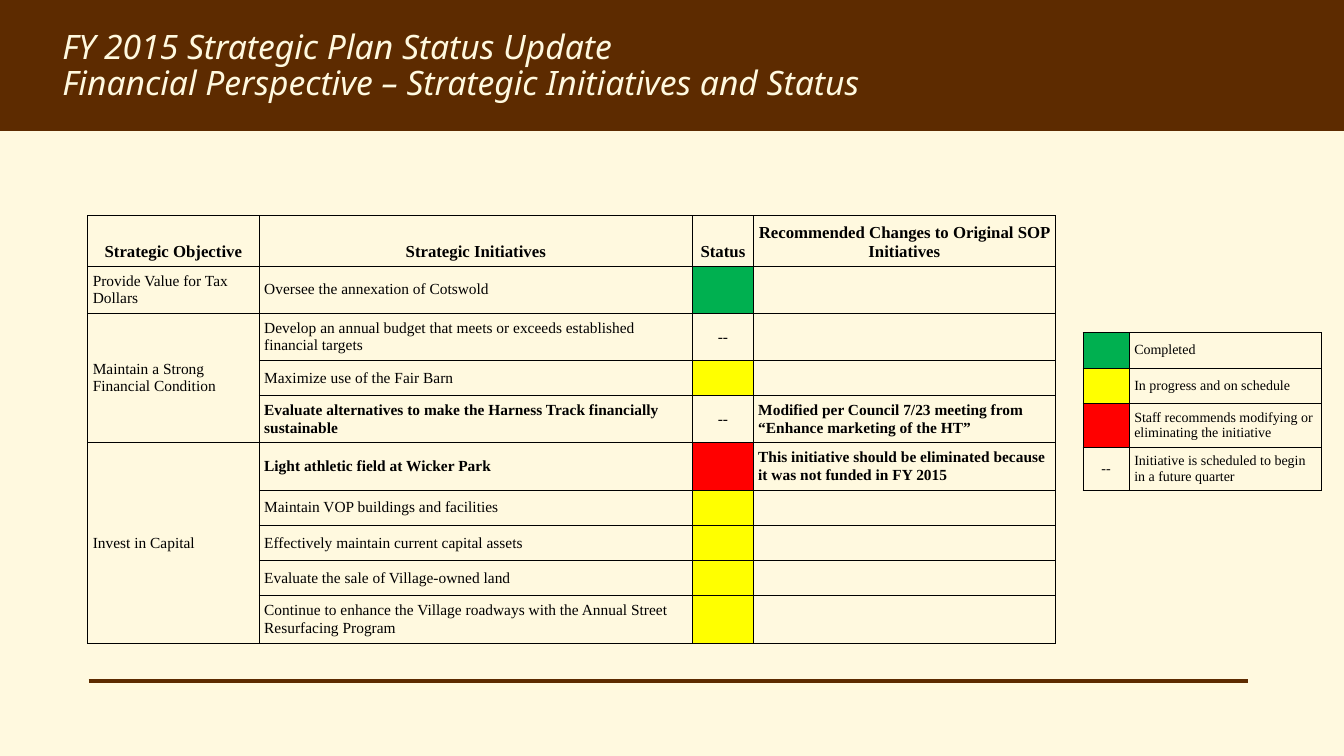
from dataclasses import dataclass

from lxml.etree import SubElement
from pptx import Presentation
from pptx.dml.color import RGBColor
from pptx.enum.shapes import MSO_CONNECTOR as CONN, MSO_SHAPE as SHAPE
from pptx.enum.text import MSO_ANCHOR as ANCHOR, PP_ALIGN as ALIGN
from pptx.oxml.ns import qn
from pptx.util import Inches, Pt

BROWN, CREAM, BLACK = "5D2B00", "FFF9DF", "000000"
GREEN, YELLOW, RED = "00B050", "FFFF00", "FF0000"
SERIF = "Times New Roman"


@dataclass
class Cell:
    text: str = ""
    size: int = 11
    bold: bool = False
    fill: str = ""
    align: ALIGN = ALIGN.LEFT
    anchor: ANCHOR = ANCHOR.MIDDLE
    rows: int = 1


def header(text: str) -> Cell:
    return Cell(text, 12, True, align=ALIGN.CENTER, anchor=ANCHOR.BOTTOM)


def status(value: str, size: int = 11) -> Cell:
    if value == "--":
        return Cell(value, size, align=ALIGN.CENTER)
    return Cell(size=size, fill=value)


def rgb(color: str) -> RGBColor:
    return RGBColor.from_string(color)


def add_borders(cell) -> None:
    tcPr = cell._tc.get_or_add_tcPr()
    for side in ("lnL", "lnR", "lnT", "lnB"):
        ln = SubElement(tcPr, qn(f"a:{side}"), w=str(Pt(0.5)))
        fill = SubElement(ln, qn("a:solidFill"))
        SubElement(fill, qn("a:srgbClr"), val=BLACK)


def fill_cell(cell, item: Cell) -> None:
    cell.margin_left = cell.margin_right = Inches(0.05)
    cell.margin_top = cell.margin_bottom = Inches(0.05)
    cell.vertical_anchor = item.anchor
    add_borders(cell)
    if item.fill:
        cell.fill.solid()
        cell.fill.fore_color.rgb = rgb(item.fill)
    else:
        cell.fill.background()
    p = cell.text_frame.paragraphs[0]
    if not item.text:
        SubElement(p._p, qn("a:endParaRPr"), sz=str(item.size * 100))
        return
    p.text = item.text
    p.alignment = item.align
    p.font.size, p.font.bold, p.font.name = Pt(item.size), item.bold, SERIF
    p.font.color.rgb = rgb(BLACK)


def add_table(s, left: float, top: float, widths: list[float], grid: list[list[Cell]]) -> None:
    height = 0.35 * len(grid)
    tbl = s.shapes.add_table(len(grid), len(widths), Inches(left), Inches(top),
                             Inches(sum(widths)), Inches(height)).table
    tbl.first_row = tbl.horz_banding = False
    for col, width in zip(tbl.columns, widths):
        col.width = Inches(width)
    for i, items in enumerate(grid):
        tbl.rows[i].height = Inches(0.35)
        for j, item in enumerate(items):
            fill_cell(tbl.cell(i, j), item)
            if item.rows > 1:
                tbl.cell(i, j).merge(tbl.cell(i + item.rows - 1, j))


def add_title(s, lines: list[str]) -> None:
    tf = s.shapes.add_textbox(Inches(0.52), Inches(0.25), Inches(12.29), Inches(0.91)).text_frame
    tf.word_wrap = True
    for i, line in enumerate(lines):
        p = tf.add_paragraph() if i else tf.paragraphs[0]
        p.text = line
        p.line_spacing = 0.9
        p.font.size, p.font.italic, p.font.name = Pt(24), True, "Noto Sans"
        p.font.color.rgb = rgb(CREAM)


OBJECTIVES = {
    "Provide Value for Tax Dollars": [
        ("Oversee the annexation of Cotswold", GREEN, ""),
    ],
    "Maintain a Strong Financial Condition": [
        ("Develop an annual budget that meets or exceeds established financial targets", "--", ""),
        ("Maximize use of the Fair Barn", YELLOW, ""),
        ("Evaluate alternatives to make the Harness Track financially sustainable", "--",
         "Modified per Council 7/23 meeting from “Enhance marketing of the HT”"),
    ],
    "Invest in Capital": [
        ("Light athletic field at Wicker Park", RED,
         "This initiative should be eliminated because it was not funded in FY 2015"),
        ("Maintain VOP buildings and facilities", YELLOW, ""),
        ("Effectively maintain current capital assets", YELLOW, ""),
        ("Evaluate the sale of Village-owned land", YELLOW, ""),
        ("Continue to enhance the Village roadways with the Annual Street Resurfacing Program",
         YELLOW, ""),
    ],
}
LEGEND = [
    (GREEN, "Completed"),
    (YELLOW, "In progress and on schedule"),
    (RED, "Staff recommends modifying or eliminating the initiative"),
    ("--", "Initiative is scheduled to begin in a future quarter"),
]


def plan_grid() -> list[list[Cell]]:
    titles = ("Strategic Objective", "Strategic Initiatives", "Status",
              "Recommended Changes to Original SOP Initiatives")
    grid = [[header(title) for title in titles]]
    for objective, initiatives in OBJECTIVES.items():
        for i, (name, state, change) in enumerate(initiatives):
            first = Cell() if i else Cell(objective, rows=len(initiatives))
            bold = bool(change)
            grid.append([first, Cell(name, bold=bold), status(state), Cell(change, bold=bold)])
    return grid


def main() -> None:
    prs = Presentation()
    prs.slide_width, prs.slide_height = Inches(13.33), Inches(7.5)
    s = prs.slides.add_slide(prs.slide_layouts[6])
    s.background.fill.solid()
    s.background.fill.fore_color.rgb = rgb(CREAM)

    rule = s.shapes.add_connector(CONN.STRAIGHT, Inches(0.88), Inches(6.76),
                                  Inches(12.38), Inches(6.76))
    rule.line.color.rgb, rule.line.width = rgb(BROWN), Pt(3)
    SubElement(rule._element.spPr, qn("a:effectLst"))

    band = s.shapes.add_shape(SHAPE.RECTANGLE, 0, 0, prs.slide_width, Inches(1.3))
    band.shadow.inherit = False
    band.fill.solid()
    band.fill.fore_color.rgb = rgb(BROWN)
    band.line.fill.background()

    add_title(s, ["FY 2015 Strategic Plan Status Update",
                  "Financial Perspective – Strategic Initiatives and Status"])
    add_table(s, 10.74, 3.3, [0.46, 1.9],
              [[status(state, 10), Cell(label, 10)] for state, label in LEGEND])
    add_table(s, 0.87, 2.14, [1.7, 4.3, 0.6, 3], plan_grid())
    prs.save("out.pptx")


if __name__ == "__main__":
    main()
